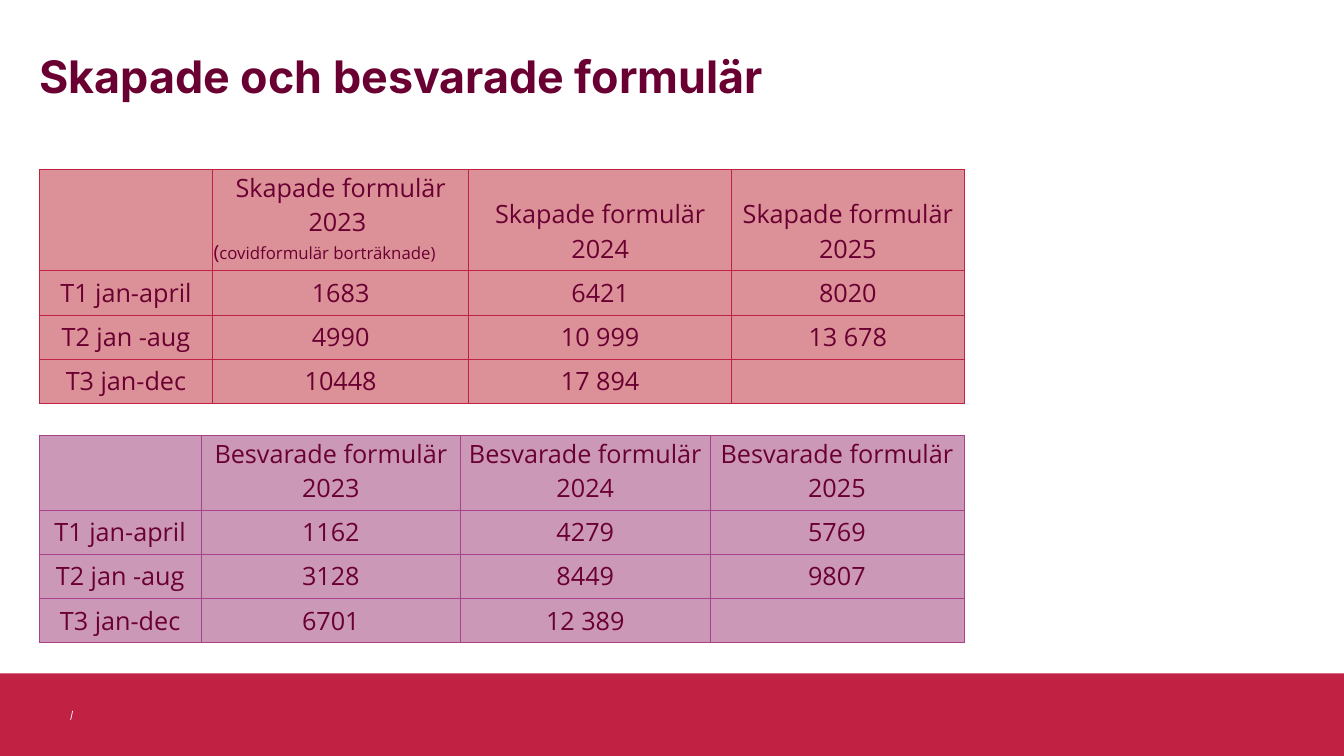
from lxml.etree import SubElement
from pptx import Presentation
from pptx.dml.color import RGBColor
from pptx.enum.shapes import MSO_CONNECTOR, MSO_SHAPE
from pptx.enum.text import MSO_ANCHOR, PP_ALIGN
from pptx.oxml.ns import qn
from pptx.util import Pt

COLORS = {"wine": "6A0032", "red": "C12143", "rose": "DB9197",
          "purple": "A9428B", "mauve": "CB98B7", "white": "FFFFFF"}
TITLE = "Skapade och besvarade formulär"
COVID_NOTE = (("(", 14), ("covidformulär borträknade)", 12))
LEFT = 28.1
ROW_HEIGHT = 31.6

FORM_TABLES = [
    {"top": 311, "header_height": 53, "fill": "mauve", "border": "purple",
     "columns": (115.5, 185.5, 178, 181.5), "note": (),
     "rows": [
         ("", "Besvarade formulär 2023", "Besvarade formulär 2024", "Besvarade formulär 2025"),
         ("T1 jan-april", "1162", "4279", "5769"),
         ("T2 jan -aug", "3128", "8449", "9807"),
         ("T3 jan-dec", "6701", "12 389", "")]},
    {"top": 121, "header_height": 65.5, "fill": "rose", "border": "red",
     "columns": (123.8, 182.9, 187.9, 165.9), "note": COVID_NOTE,
     "rows": [
         ("", "Skapade formulär 2023 ", "Skapade formulär 2024", "Skapade formulär 2025"),
         ("T1 jan-april", "1683", "6421", "8020"),
         ("T2 jan -aug", "4990", "10 999", "13 678"),
         ("T3 jan-dec", "10448", "17 894", "")]},
]
CELL_FORMAT = {"margin_left": Pt(0.7), "margin_right": Pt(0.7), "margin_top": Pt(0.7),
               "margin_bottom": Pt(3.6), "vertical_anchor": MSO_ANCHOR.BOTTOM}
TITLE_FORMAT = {"margin_left": 0, "margin_right": 0, "margin_top": 0, "margin_bottom": 0,
                "vertical_anchor": MSO_ANCHOR.TOP, "word_wrap": True}


def rgb(color):
    return RGBColor.from_string(COLORS[color])


def apply(target, values):
    for name, value in values.items():
        setattr(target, name, value)


def style_font(font, name, size, bold=False):
    apply(font, {"name": name, "size": Pt(size), "bold": bold})
    font.color.rgb = rgb("wine")


def add_borders(cell, color):
    properties = cell._tc.get_or_add_tcPr()
    for position, side in enumerate(("lnL", "lnR", "lnT", "lnB")):
        border = SubElement(properties, qn(f"a:{side}"), w=str(Pt(0.5)))
        fill = SubElement(border, qn("a:solidFill"))
        SubElement(fill, qn("a:srgbClr"), val=COLORS[color])
        properties.insert(position, border)


def add_form_table(slide, content):
    rows, columns = content["rows"], content["columns"]
    heights = [content["header_height"]] + [ROW_HEIGHT] * (len(rows) - 1)
    table = slide.shapes.add_table(len(rows), len(columns), Pt(LEFT), Pt(content["top"]),
                                   Pt(sum(columns)), Pt(sum(heights))).table
    for column, width in zip(table.columns, columns):
        column.width = Pt(width)
    for row, height, values in zip(table.rows, heights, rows):
        row.height = Pt(height)
        for cell, value in zip(row.cells, values):
            apply(cell, CELL_FORMAT)
            cell.fill.solid()
            cell.fill.fore_color.rgb = rgb(content["fill"])
            add_borders(cell, content["border"])
            paragraph = cell.text_frame.paragraphs[0]
            paragraph.alignment = PP_ALIGN.CENTER
            if value:
                run = paragraph.add_run()
                run.text = value
                style_font(run.font, "Open Sans", 18)
    # Small note under the first year's heading
    if content["note"]:
        note = table.cell(0, 1).text_frame.add_paragraph()
        note.alignment = PP_ALIGN.LEFT
        for text, size in content["note"]:
            run = note.add_run()
            run.text = text
            style_font(run.font, "Open Sans", size)


def main():
    deck = Presentation()
    apply(deck, {"slide_width": Pt(960), "slide_height": Pt(540)})
    slide = deck.slides.add_slide(deck.slide_layouts[5])

    # Footer band with its small slash
    band = slide.shapes.add_shape(MSO_SHAPE.RECTANGLE, 0, Pt(481), Pt(960), Pt(59))
    band.shadow.inherit = False
    band.fill.solid()
    band.fill.fore_color.rgb = rgb("red")
    band.line.fill.background()
    slash = slide.shapes.add_connector(MSO_CONNECTOR.STRAIGHT, Pt(51.9), Pt(507.8),
                                       Pt(50.5), Pt(514.2))
    slash.line.color.rgb = rgb("white")
    slash.line.width = Pt(0.5)
    SubElement(slash._element.spPr, qn("a:effectLst"))

    # Tables
    for content in FORM_TABLES:
        add_form_table(slide, content)

    # Title
    title = slide.shapes.title
    apply(title, {"left": Pt(LEFT), "top": Pt(34.6), "width": Pt(547), "height": Pt(47.5)})
    apply(title.text_frame, TITLE_FORMAT)
    title.text_frame.text = TITLE
    heading = title.text_frame.paragraphs[0]
    heading.alignment = PP_ALIGN.LEFT
    style_font(heading.runs[0].font, "Inter", 32, bold=True)

    deck.save("out.pptx")


if __name__ == "__main__":
    main()
